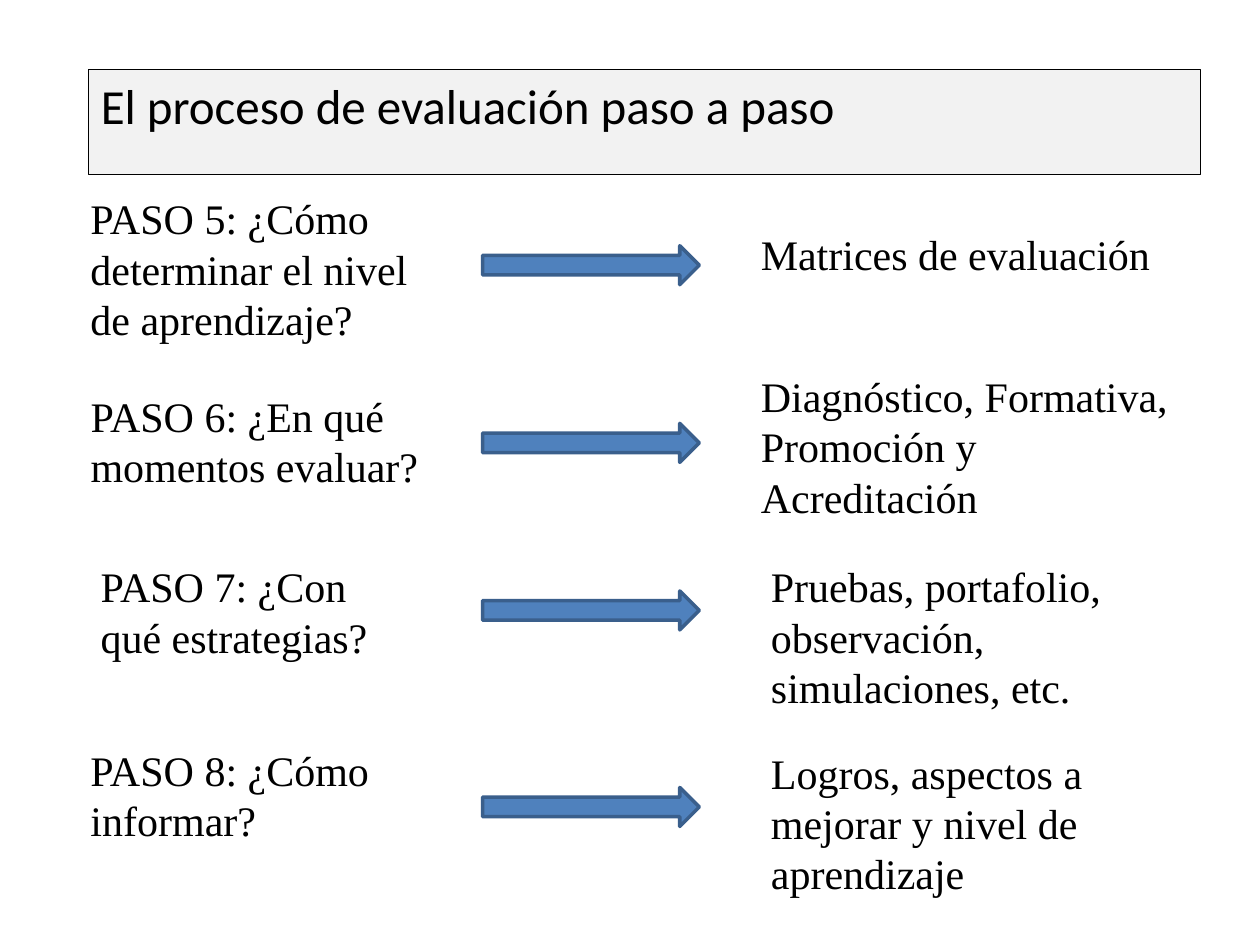
"""Build the slide that pairs evaluation steps 5 to 8 with their answers."""
from pptx import Presentation
from pptx.dml.color import RGBColor as Rgb
from pptx.enum.shapes import MSO_SHAPE as Shape
from pptx.enum.text import MSO_ANCHOR as Anchor, MSO_AUTO_SIZE as Fit, PP_ALIGN as Align
from pptx.util import Inches, Pt

WIDE, HIGH = Inches(10), Inches(7.5)
HUES = {"ink": "000000", "band": "F2F2F2", "arrow": "4F81BD", "edge": "3A5F8C"}
STEPS = [
    (("PASO 5: ¿Cómo determinar el nivel de aprendizaje?", 6.2, 19.73, 27.3, 3), 26,
     ("Matrices de evaluación", 59.4, 23.47, 36.7, 1)),
    (("PASO 6: ¿En qué momentos evaluar?", 6.2, 40.67, 28.9, 2), 44.8,
     ("Diagnóstico, Formativa, Promoción y Acreditación", 59.4, 38.53, 34.4, 3)),
    (("PASO 7: ¿Con qué estrategias?", 7, 58.67, 26.6, 2), 62.53,
     ("Pruebas, portafolio, observación, simulaciones, etc.", 60.2, 58.67, 35.9, 3)),
    (("PASO 8: ¿Cómo informar?", 6.2, 78.13, 27.3, 2), 83.33,
     ("Logros, aspectos a mejorar y nivel de aprendizaje", 60.2, 78.4, 37.5, 3)),
]


def hue(name):
    return Rgb.from_string(HUES[name])


def area(left, top, width, height):
    """Turn percentages of the slide into lengths."""
    return (int(WIDE * left / 100), int(HIGH * top / 100),
            int(WIDE * width / 100), int(HIGH * height / 100))


def paint(shape, fill, edge, weight):
    shape.fill.solid()
    shape.fill.fore_color.rgb = hue(fill)
    shape.line.color.rgb = hue(edge)
    shape.line.width = Pt(weight)


def write(shape, text, face, size):
    frame = shape.text_frame
    frame.text = text
    frame.word_wrap = True
    frame.auto_size = Fit.SHAPE_TO_FIT_TEXT
    frame.vertical_anchor = Anchor.TOP
    para = frame.paragraphs[0]
    para.alignment = Align.LEFT
    font = para.runs[0].font
    font.name, font.size = face, Pt(size)
    font.color.rgb = hue("ink")


def add_title(slide, text):
    title = slide.shapes.title
    title.left, title.top, title.width, title.height = area(7, 7.33, 88.3, 7.6)
    paint(title, "band", "ink", 0.75)
    write(title, text, "Calibri", 28)


def add_note(slide, text, left, top, width, lines):
    box = slide.shapes.add_textbox(*area(left, top, width, 1.47 + 5.33 * lines))
    write(box, text, "Times New Roman", 24)


def add_arrow(slide, top):
    arrow = slide.shapes.add_shape(Shape.RIGHT_ARROW, *area(38.3, top, 17.2, 4.13))
    arrow.shadow.inherit = False
    paint(arrow, "arrow", "edge", 2)


def main():
    deck = Presentation()
    deck.slide_width, deck.slide_height = WIDE, HIGH
    slide = deck.slides.add_slide(deck.slide_layouts[5])
    add_title(slide, "El proceso de evaluación paso a paso")
    for step, top, answer in STEPS:
        add_note(slide, *step)
        add_arrow(slide, top)
        add_note(slide, *answer)
    deck.save("out.pptx")


if __name__ == "__main__":
    main()
